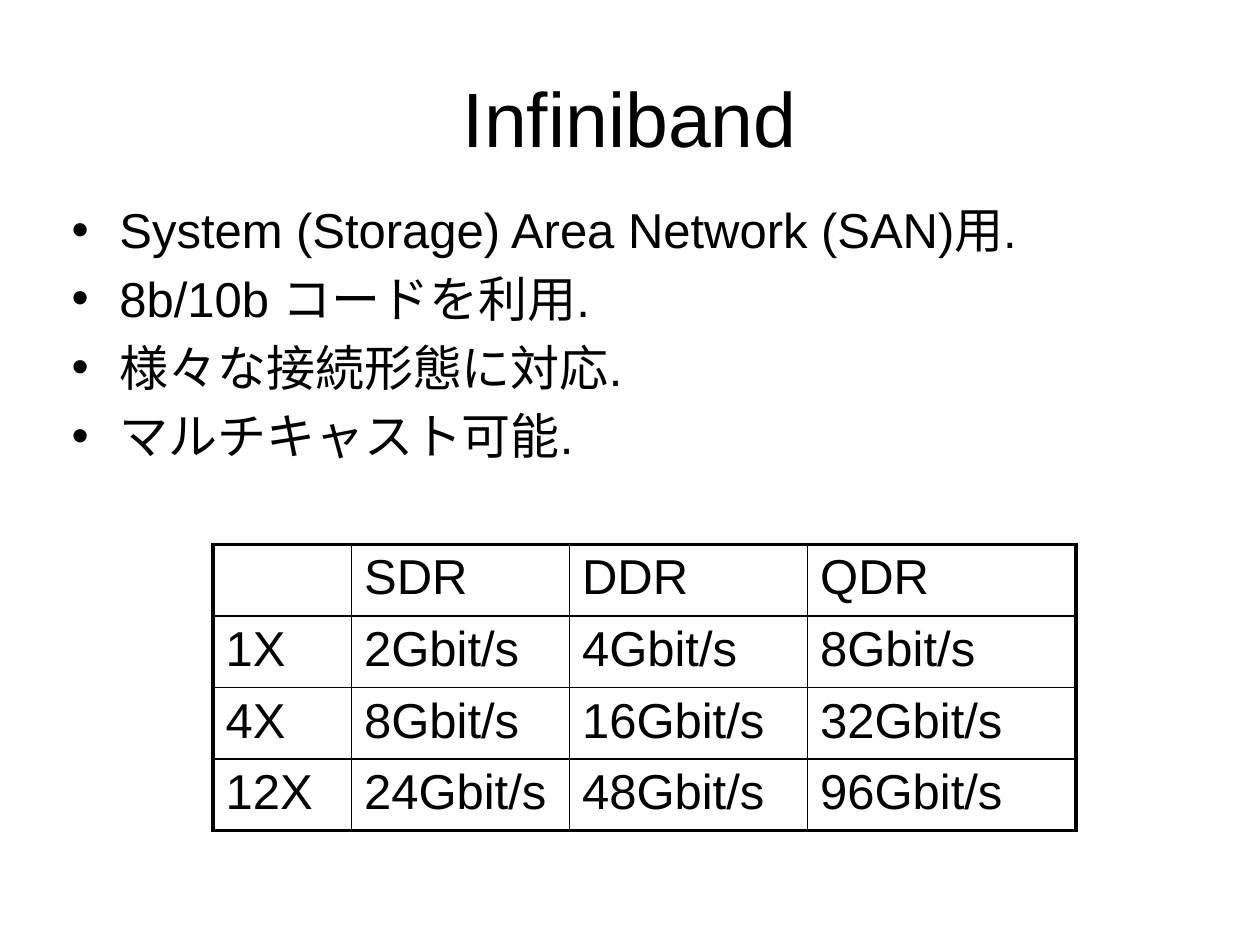
import lxml.etree
import pptx
import pptx.dml.color
import pptx.enum.text
import pptx.oxml.ns
import pptx.util

COLORS = {"text": "000000", "border": "000000", "background": "FFFFFF"}
FONT = "Arial"
BODY_SIZE = 28
SPACE_BEFORE = 0.2 * BODY_SIZE

presentation = pptx.Presentation()
presentation.slide_width = pptx.util.Inches(10)
presentation.slide_height = pptx.util.Inches(7.5)
width, height = presentation.slide_width, presentation.slide_height
slide = presentation.slides.add_slide(presentation.slide_layouts[6])
slide.background.fill.solid()
slide.background.fill.fore_color.rgb = pptx.dml.color.RGBColor.from_string(COLORS["background"])


def format_paragraph(paragraph, size, space_before=0):
    paragraph.space_before = pptx.util.Pt(space_before)
    for run in paragraph.runs:
        run.font.name = FONT
        run.font.size = pptx.util.Pt(size)
        run.font.color.rgb = pptx.dml.color.RGBColor.from_string(COLORS["text"])


def add_element(parent, tag, **attributes):
    return lxml.etree.SubElement(parent, pptx.oxml.ns.qn(tag), attributes)


title = slide.shapes.add_textbox(int(0.05 * width), int(0.04 * height), int(0.9 * width), int(0.167 * height))
title.text_frame.word_wrap = True
title.text_frame.vertical_anchor = pptx.enum.text.MSO_ANCHOR.MIDDLE
title.text_frame.text = "Infiniband"
title.text_frame.paragraphs[0].alignment = pptx.enum.text.PP_ALIGN.CENTER
format_paragraph(title.text_frame.paragraphs[0], 44)

bullets = [
    "System (Storage) Area Network (SAN)用.",
    "8b/10b コードを利用.",
    "様々な接続形態に対応.",
    "マルチキャスト可能.",
]
body = slide.shapes.add_textbox(int(0.047 * width), int(0.205 * height), int(0.883 * width), int(0.74 * height))
body.text_frame.word_wrap = True
body.text_frame.text = "\n".join(bullets)
indent = pptx.util.Inches(0.38)
for paragraph in body.text_frame.paragraphs:
    format_paragraph(paragraph, BODY_SIZE, SPACE_BEFORE)
    properties = paragraph._p.get_or_add_pPr()
    properties.set("marL", str(indent))
    properties.set("indent", str(-indent))
    add_element(properties, "a:buFont", typeface=FONT)
    add_element(properties, "a:buChar", char="•")

rates = [
    ["", "SDR", "DDR", "QDR"],
    ["1X", "2Gbit/s", "4Gbit/s", "8Gbit/s"],
    ["4X", "8Gbit/s", "16Gbit/s", "32Gbit/s"],
    ["12X", "24Gbit/s", "48Gbit/s", "96Gbit/s"],
]
column_widths = [1.1, 1.73, 1.89, 2.13]
last_row, last_column = len(rates) - 1, len(column_widths) - 1
table = slide.shapes.add_table(
    len(rates), len(column_widths),
    int(0.169 * width), int(0.576 * height), pptx.util.Inches(sum(column_widths)), int(0.303 * height),
).table
table.first_row = False
table.horz_banding = False
for column, column_width in zip(table.columns, column_widths):
    column.width = pptx.util.Inches(column_width)

for row_index, row in enumerate(rates):
    for column_index, text in enumerate(row):
        cell = table.cell(row_index, column_index)
        cell.text = text
        format_paragraph(cell.text_frame.paragraphs[0], BODY_SIZE, SPACE_BEFORE)
        outer_edges = {
            "a:lnL": column_index == 0,
            "a:lnR": column_index == last_column,
            "a:lnT": row_index == 0,
            "a:lnB": row_index == last_row,
        }
        cell_properties = cell._tc.get_or_add_tcPr()
        for tag, is_outer in outer_edges.items():
            line = add_element(cell_properties, tag, w=str(pptx.util.Pt(2.25 if is_outer else 1)))
            add_element(add_element(line, "a:solidFill"), "a:srgbClr", val=COLORS["border"])
        cell.fill.background()

presentation.save("out.pptx")
